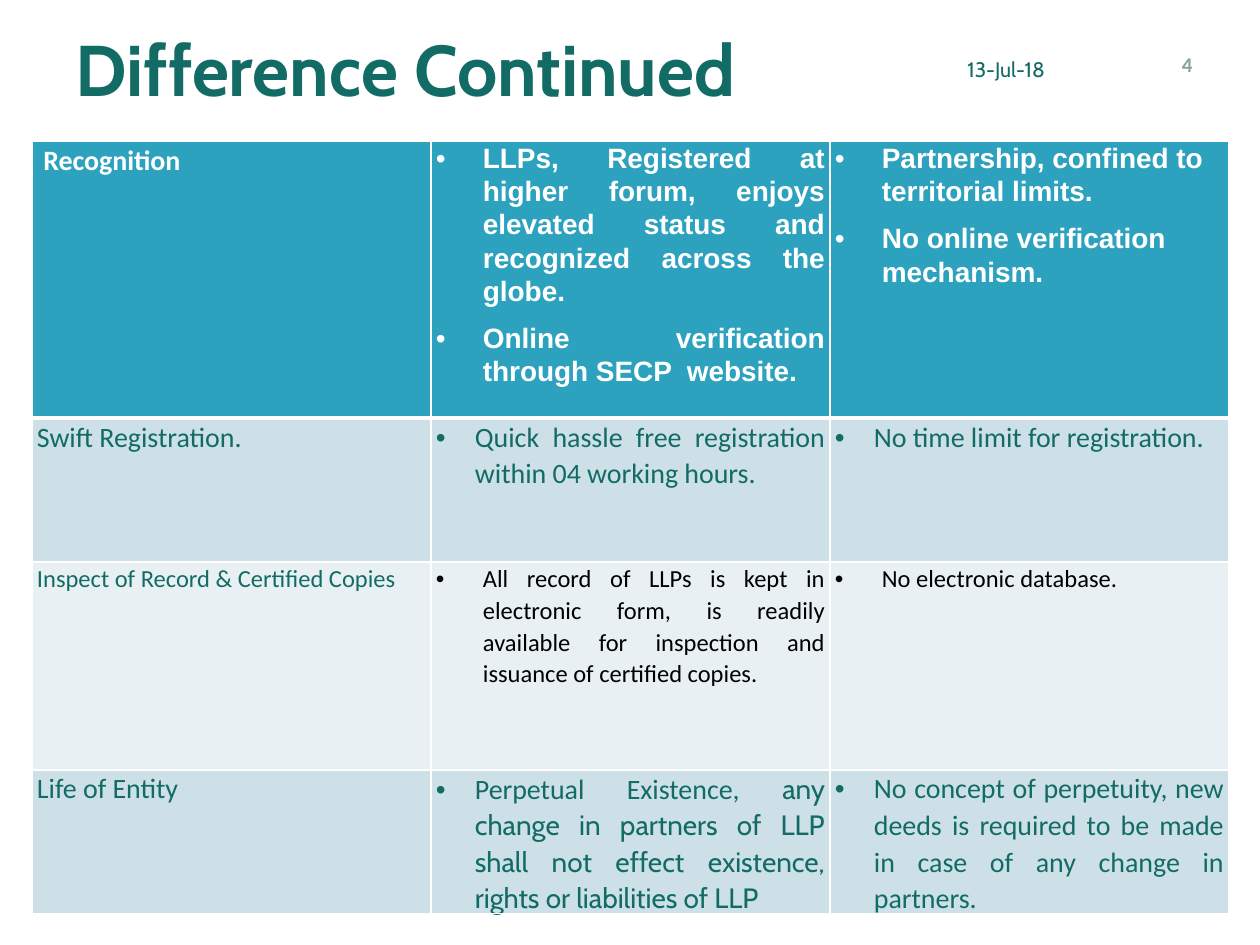
from lxml import etree
from pptx import Presentation
from pptx.dml.color import RGBColor
from pptx.enum.text import MSO_ANCHOR, PP_ALIGN as AL
from pptx.oxml.ns import qn
from pptx.util import Emu, Pt

PX = 914400 // 126
GREEN, WHITE, BLACK, GREY = "126C65", "FFFFFF", "000000", "8AA29F"
HEADER, BAND, PALE = "2DA2BF", "CDE0E8", "E8F0F4"
COL_W, ROW_HEIGHTS = 399, [277, 144, 208, 143]
INDENT_WIDE, INDENT_NARROW = 47, 39


def px(n):
    return Emu(n * PX)


def rgb(color):
    return RGBColor.from_string(color)


def add_run(p, text, size, font, color, bold=False):
    r = p.add_run()
    r.text = text
    r.font.size, r.font.name, r.font.bold = Pt(size), font, bold
    r.font.color.rgb = rgb(color)


def add_label(s, box, text, size, font, color, bold=False, align=AL.LEFT):
    tf = s.shapes.add_textbox(*map(px, box)).text_frame
    tf.word_wrap = True
    tf.vertical_anchor = MSO_ANCHOR.MIDDLE
    p = tf.paragraphs[0]
    p.alignment = align
    add_run(p, text, size, font, color, bold)


def add_bullet(p, indent):
    pPr = p._p.get_or_add_pPr()
    pPr.set("marL", str(px(indent)))
    pPr.set("indent", str(-px(indent)))
    etree.SubElement(pPr, qn("a:buFont")).set("typeface", "Arial")
    etree.SubElement(pPr, qn("a:buChar")).set("char", "•")
    if indent == INDENT_WIDE:
        tabs = etree.SubElement(pPr, qn("a:tabLst"))
        etree.SubElement(tabs, qn("a:tab"), pos=str(px(63)), algn="l")
        p.space_after = Pt(8)


def set_borders(cell, top, bottom):
    tcPr = cell._tc.get_or_add_tcPr()
    widths = {"lnL": 1, "lnR": 1, "lnT": top, "lnB": bottom}
    for i, (side, width) in enumerate(widths.items()):
        ln = etree.Element(qn(f"a:{side}"), w=str(Pt(width)))
        fill = etree.SubElement(ln, qn("a:solidFill"))
        etree.SubElement(fill, qn("a:srgbClr"), val=WHITE)
        tcPr.insert(i, ln)


def fill_cell(cell, paragraphs, style, indent=None, align=AL.JUSTIFY):
    """Each paragraph is a list of (text, font) runs."""
    size, color, bold = style
    cell.margin_left = cell.margin_right = px(5)
    cell.margin_top = cell.margin_bottom = 0
    tf = cell.text_frame
    for i, runs in enumerate(paragraphs):
        p = tf.add_paragraph() if i else tf.paragraphs[0]
        p.alignment, p.line_spacing = align, 1.07
        if indent:
            add_bullet(p, indent)
        for text, font in runs:
            add_run(p, text, size, font, color, bold)


def add_comparison(s, rows):
    frame = s.shapes.add_table(len(rows), 3, px(32), px(141),
                               px(3 * COL_W), px(sum(ROW_HEIGHTS)))
    table = frame.table
    for col in table.columns:
        col.width = px(COL_W)
    for i, (fill, label_style, style, indent, aligns, texts) in enumerate(rows):
        table.rows[i].height = px(ROW_HEIGHTS[i])
        for j, paragraphs in enumerate(texts):
            cell = table.cell(i, j)
            fill_cell(cell, paragraphs, style if j else label_style,
                      indent if j else None, aligns[j])
            cell.fill.solid()
            cell.fill.fore_color.rgb = rgb(fill)
            set_borders(cell, 3 if i == 1 else 1, 3 if i == 0 else 1)


def main():
    prs = Presentation()
    prs.slide_width, prs.slide_height = px(1260), px(945)
    s = prs.slides.add_slide(prs.slide_layouts[6])

    # Page number, date and title
    add_label(s, (1142, 39, 63, 50), "4", 12, "Calibri", GREY, True, AL.RIGHT)
    add_label(s, (955, 44, 187, 50), "13-Jul-18", 12, "Cabin", GREEN)
    add_label(s, (63, 10, 1061, 116), "Difference Continued", 41, "Cabin",
              GREEN, True)

    # Comparison table: fill, label style, text style, indent, alignments, texts
    head, body = (16, WHITE, True), (16, GREEN, False)
    justified = [AL.JUSTIFY] * 3
    add_comparison(s, [
        (HEADER, head, head, INDENT_WIDE, [AL.JUSTIFY, AL.JUSTIFY, AL.LEFT], [
            [[(" Recognition", "Calibri")]],
            [[("LLPs, Registered at higher forum, enjoys elevated status and "
               "recognized across the globe.", "Arial")],
             [("Online verification through SECP  website.", "Arial")]],
            [[("Partnership, confined to territorial limits.", "Arial")],
             [("No online verification mechanism.", "Arial")]]]),
        (BAND, body, body, INDENT_NARROW, justified, [
            [[("Swift Registration.", "Calibri")]],
            [[("Quick hassle free registration within 04 working hours.",
               "Calibri")]],
            [[("No time limit for registration.", "Calibri")]]]),
        (PALE, (14, GREEN, False), (14, BLACK, False), INDENT_WIDE, justified, [
            [[("Inspect of Record & Certified Copies", "Calibri")]],
            [[("All record of LLPs is kept in electronic form, is readily "
               "available for inspection and issuance of certified copies.",
               "Calibri")]],
            [[("No electronic database.", "Calibri")]]]),
        (BAND, body, body, INDENT_NARROW, justified, [
            [[("Life of Entity", "Calibri")]],
            [[("Perpetual Existence, ", "Calibri"),
              ("any change in partners of LLP shall not effect existence, "
               "rights or liabilities of LLP", "Cabin")]],
            [[("No concept of perpetuity, new deeds is required to be made "
               "in case of any change in partners.", "Calibri")]]]),
    ])
    prs.save("out.pptx")


if __name__ == "__main__":
    main()
